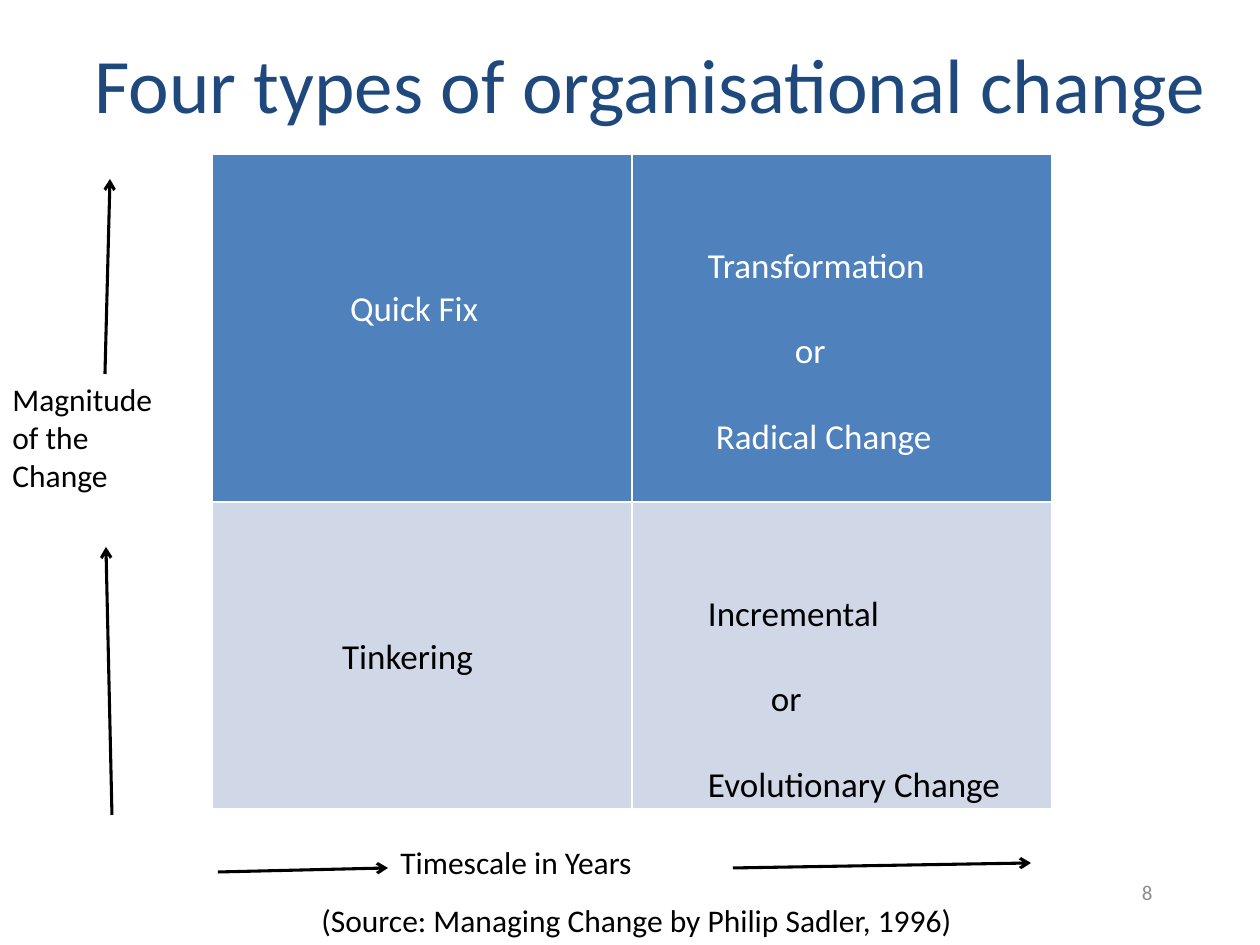
from lxml import etree
from pptx import Presentation
from pptx.dml.color import RGBColor
from pptx.enum.shapes import MSO_CONNECTOR
from pptx.enum.text import MSO_ANCHOR, PP_ALIGN
from pptx.oxml.ns import qn
from pptx.util import Pt

STRAIGHT = MSO_CONNECTOR.STRAIGHT
LEFT, RIGHT = PP_ALIGN.LEFT, PP_ALIGN.RIGHT
TOP, MIDDLE = MSO_ANCHOR.TOP, MSO_ANCHOR.MIDDLE

PX = 914400 // 126  # EMU in one px
FONT = "Calibri"
COLORS = {
    "title": "1F497D",
    "strong": "4F81BD",
    "pale": "D0D8E8",
    "white": "FFFFFF",
    "black": "000000",
    "grey": "8C8C8C",
}

# Each quadrant: top margin, then (text, indent) per line
QUADRANTS = [
    [(134, [("Quick Fix", 138)]),
     (91, [("Transformation", 76), ("or", 163), ("Radical Change", 84)])],
    [(134, [("Tinkering", 130)]),
     (91, [("Incremental", 76), ("or", 139), ("Evolutionary Change", 76)])],
]
ROW_STYLES = [("strong", "white"), ("pale", "black")]
ROW_HEIGHTS = [348, 307]


def px(n):
    return n * PX


def rgb(name):
    return RGBColor.from_string(COLORS[name])


def write(tf, lines, size=18, color="black", align=LEFT, gap=0, indents=()):
    """Write one paragraph per line, with an optional gap between and indents."""
    for i, line in enumerate(lines):
        p = tf.paragraphs[0] if i == 0 else tf.add_paragraph()
        p.alignment = align
        if i and gap:
            p.space_before = Pt(gap)
        if indents:
            p._p.get_or_add_pPr().set("marL", str(px(indents[i])))
        r = p.add_run()
        r.text = line
        r.font.name, r.font.size = FONT, Pt(size)
        r.font.color.rgb = rgb(color)


def add_text(s, box, lines, wrap=False, anchor=TOP, **fmt):
    tf = s.shapes.add_textbox(*map(px, box)).text_frame
    tf.word_wrap = wrap
    tf.vertical_anchor = anchor
    write(tf, lines, **fmt)


def add_arrow(s, x1, y1, x2, y2):
    c = s.shapes.add_connector(STRAIGHT, px(x1), px(y1), px(x2), px(y2))
    c.line.color.rgb = rgb("black")
    c.line.width = Pt(1.75)
    etree.SubElement(c.line._get_or_add_ln(), qn("a:tailEnd"), type="arrow")
    etree.SubElement(c._element.spPr, qn("a:effectLst"))


def add_borders(cell):
    tcPr = cell._tc.get_or_add_tcPr()
    for side in ("lnL", "lnR", "lnT", "lnB"):
        ln = etree.SubElement(tcPr, qn(f"a:{side}"), w=str(Pt(1)))
        fill = etree.SubElement(ln, qn("a:solidFill"))
        etree.SubElement(fill, qn("a:srgbClr"), val=COLORS["white"])


def matrix(s, x, y, w):
    """Two by two table of the types of change."""
    table = s.shapes.add_table(2, 2, px(x), px(y), px(w), px(sum(ROW_HEIGHTS))).table
    for col in table.columns:
        col.width = px(w // 2)
    for i, (row, (fill, color)) in enumerate(zip(QUADRANTS, ROW_STYLES)):
        table.rows[i].height = px(ROW_HEIGHTS[i])
        for j, (top, lines) in enumerate(row):
            cell = table.cell(i, j)
            add_borders(cell)
            cell.fill.solid()
            cell.fill.fore_color.rgb = rgb(fill)
            cell.margin_left = cell.margin_right = cell.margin_bottom = 0
            cell.margin_top = px(top)
            texts, indents = zip(*lines)
            write(cell.text_frame, texts, size=20, color=color, gap=24.4,
                  indents=indents)


def magnitude_axis(s, x, y):
    """Vertical axis: label between two upward arrows."""
    add_arrow(s, x + 105, y + 195, x + 110, y)
    add_text(s, (x, y + 195, 209, 165), ["Magnitude", "of the", "Change"])
    add_arrow(s, x + 112, y + 636, x + 106, y + 368)


def timescale_axis(s, x, y):
    """Horizontal axis: label between two rightward arrows."""
    add_arrow(s, x, y + 35, x + 170, y + 31)
    add_text(s, (x + 170, y, 345, 63), ["Timescale in Years"])
    add_arrow(s, x + 515, y + 31, x + 813, y + 26)


def footer(s, x, y):
    """Source line and slide number."""
    add_text(s, (x, y + 34, 677, 50),
             ["(Source: Managing Change by Philip Sadler, 1996)"])
    add_text(s, (x + 594, y, 262, 63), ["8"], wrap=True, anchor=MIDDLE,
             size=12, color="grey", align=RIGHT)


def main():
    prs = Presentation()
    prs.slide_width, prs.slide_height = px(1260), px(945)
    s = prs.slides.add_slide(prs.slide_layouts[6])
    add_text(s, (82, 30, 1138, 106), ["Four types of organisational change"],
             size=44, color="title")
    matrix(s, 212, 154, 840)
    magnitude_axis(s, 0, 179)
    timescale_axis(s, 218, 837)
    footer(s, 309, 861)
    prs.save("out.pptx")


if __name__ == "__main__":
    main()
